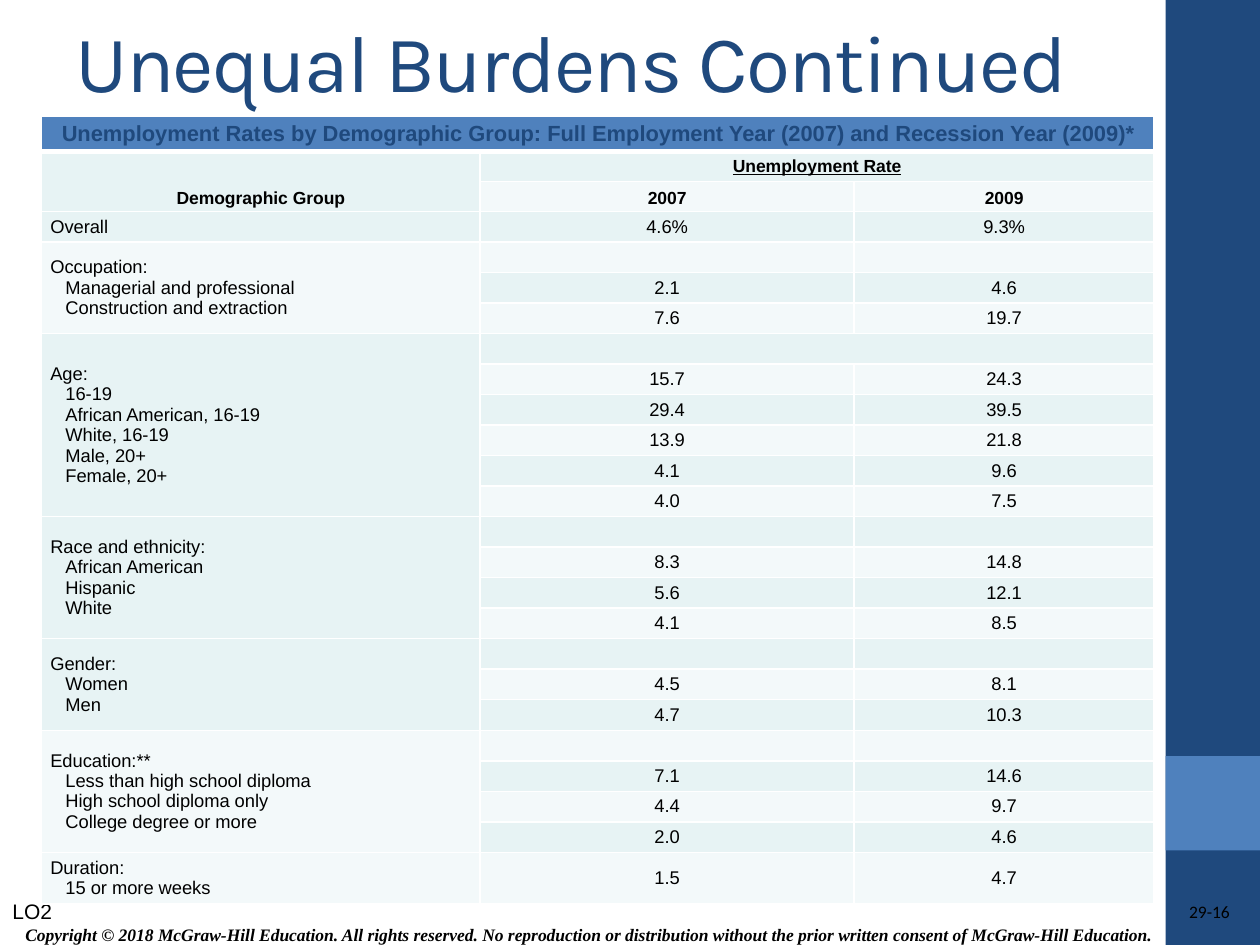
from lxml import etree
from pptx import Presentation
from pptx.dml.color import RGBColor
from pptx.enum.shapes import MSO_SHAPE
from pptx.enum.text import MSO_ANCHOR, PP_ALIGN
from pptx.oxml.ns import qn
from pptx.util import Inches, Pt

RECTANGLE = MSO_SHAPE.RECTANGLE
LEFT, CENTER, RIGHT = PP_ALIGN.LEFT, PP_ALIGN.CENTER, PP_ALIGN.RIGHT
TOP, MIDDLE, BOTTOM = MSO_ANCHOR.TOP, MSO_ANCHOR.MIDDLE, MSO_ANCHOR.BOTTOM

NAVY, BLUE, BLACK, WHITE = "1F497D", "4F81BD", "000000", "FFFFFF"
BANDS = ("F3F9FA", "E7F3F4")
GRID_COLUMNS, GRID_ROWS = 40, 30

GROUPS = [
    ("Overall", [], [("4.6%", "9.3%")]),
    ("Occupation:", ["Managerial and professional", "Construction and extraction"],
     [("", ""), ("2.1", "4.6"), ("7.6", "19.7")]),
    ("Age:", ["16-19", "African American, 16-19", "White, 16-19", "Male, 20+", "Female, 20+"],
     [("", ""), ("15.7", "24.3"), ("29.4", "39.5"), ("13.9", "21.8"),
      ("4.1", "9.6"), ("4.0", "7.5")]),
    ("Race and ethnicity:", ["African American", "Hispanic", "White"],
     [("", ""), ("8.3", "14.8"), ("5.6", "12.1"), ("4.1", "8.5")]),
    ("Gender:", ["Women", "Men"], [("", ""), ("4.5", "8.1"), ("4.7", "10.3")]),
    ("Education:**",
     ["Less than high school diploma", "High school diploma only", "College degree or more"],
     [("", ""), ("7.1", "14.6"), ("4.4", "9.7"), ("2.0", "4.6")]),
    ("Duration:", ["15 or more weeks"], [("1.5", "4.7")]),
]
HEADER_ROWS = 3
DATA_ROWS = sum(len(rates) for _, _, rates in GROUPS)
COLUMN_WIDTHS = [13.92, 11.88, 9.52]
ROW_HEIGHTS = [1.12, 0.96, 0.96] + [0.97] * (DATA_ROWS - 1) + [1.64]


def color(hex_string):
    return RGBColor.from_string(hex_string)


class SlideBuilder:
    def __init__(self, presentation):
        self.slide = presentation.slides.add_slide(presentation.slide_layouts[6])
        self.column = presentation.slide_width / GRID_COLUMNS
        self.row = presentation.slide_height / GRID_ROWS

    def across(self, columns):
        return round(columns * self.column)

    def down(self, rows):
        return round(rows * self.row)

    def place(self, left, top, width, height):
        return self.across(left), self.down(top), self.across(width), self.down(height)

    def rectangle(self, area, fill):
        shape = self.slide.shapes.add_shape(RECTANGLE, *self.place(*area))
        shape.shadow.inherit = False
        shape.fill.solid()
        shape.fill.fore_color.rgb = color(fill)
        shape.line.fill.background()

    def style(self, paragraph, size, font="Arial", ink=BLACK, align=LEFT,
              bold=False, italic=False, underline=False, spacing=0):
        paragraph.alignment = align
        for run in paragraph.runs:
            run.font.size = Pt(size)
            run.font.name = font
            run.font.color.rgb = color(ink)
            run.font.bold = bold
            run.font.italic = italic
            run.font.underline = underline
            if spacing:
                run.font._element.set("spc", str(spacing * 100))

    def text(self, area, words, size, anchor=TOP, inset=(0.1, 0.05), **style):
        frame = self.slide.shapes.add_textbox(*self.place(*area)).text_frame
        frame.word_wrap = True
        frame.vertical_anchor = anchor
        frame.margin_left = frame.margin_right = Inches(inset[0])
        frame.margin_top = frame.margin_bottom = Inches(inset[1])
        frame.text = words
        self.style(frame.paragraphs[0], size, **style)

    def border(self, cell, side, width):
        line = etree.SubElement(cell._tc.get_or_add_tcPr(), qn(f"a:ln{side}"), w=str(Pt(width)))
        fill = etree.SubElement(line, qn("a:solidFill"))
        etree.SubElement(fill, qn("a:srgbClr"), val=WHITE)

    def table(self, area, widths, heights):
        frame = self.slide.shapes.add_table(len(heights), len(widths), *self.place(*area))
        table = frame.table
        table.first_row = table.horz_banding = False
        for column, width in zip(table.columns, widths):
            column.width = self.across(width)
        for index, (row, height) in enumerate(zip(table.rows, heights)):
            row.height = self.down(height)
            for cell in row.cells:
                self.border(cell, "L", 1)
                self.border(cell, "R", 1)
                self.border(cell, "T", 3 if index == 1 else 1)
                self.border(cell, "B", 3 if index == 0 else 1)
                cell.fill.solid()
                cell.fill.fore_color.rgb = color(BANDS[index % 2] if index else BLUE)
                cell.margin_left = cell.margin_right = Inches(0.07)
                cell.margin_top = cell.margin_bottom = Inches(0.03)
                etree.SubElement(cell.text_frame.paragraphs[0]._p, qn("a:endParaRPr"), sz="1000")
        return table

    def cell(self, cell, words, size=10.5, anchor=MIDDLE, **style):
        cell.vertical_anchor = anchor
        cell.text_frame.text = words
        for index, paragraph in enumerate(cell.text_frame.paragraphs):
            self.style(paragraph, size, **style)
            if index:
                paragraph._p.get_or_add_pPr().set("marL", str(Inches(0.12)))


def fill_header(builder, table):
    heading = {"align": CENTER, "bold": True}
    title, group, rate = table.cell(0, 0), table.cell(1, 0), table.cell(1, 1)
    title.merge(table.cell(0, 2))
    group.merge(table.cell(2, 0))
    rate.merge(table.cell(1, 2))
    builder.cell(title, "Unemployment Rates by Demographic Group: Full Employment Year (2007) "
                 "and Recession Year (2009)*", 12.5, ink=NAVY, **heading)
    builder.cell(group, "Demographic Group", 10, BOTTOM, **heading)
    builder.cell(rate, "Unemployment Rate", 10, underline=True, **heading)
    for column, year in enumerate(("2007", "2009"), 1):
        builder.cell(table.cell(2, column), year, 10, BOTTOM, **heading)


def fill_groups(builder, table):
    first = HEADER_ROWS
    for name, members, rates in GROUPS:
        label = table.cell(first, 0)
        if len(rates) > 1:
            label.merge(table.cell(first + len(rates) - 1, 0))
        builder.cell(label, "\n".join([name, *members]))
        if name == "Age:":
            table.cell(first, 1).merge(table.cell(first, 2))
        for row, pair in enumerate(rates, first):
            for column, rate in enumerate(pair, 1):
                if rate:
                    builder.cell(table.cell(row, column), rate, align=CENTER)
        first += len(rates)


def main():
    presentation = Presentation()
    presentation.slide_width = Inches(10)
    presentation.slide_height = Inches(7.5)
    builder = SlideBuilder(presentation)
    builder.rectangle((37, 0, 3, 30), NAVY)
    builder.rectangle((37, 24, 3, 3), BLUE)
    builder.text((0.24, 29.12, 36.88, 1.12),
                 "Copyright © 2018 McGraw-Hill Education. All rights reserved. No reproduction or "
                 "distribution without the prior written consent of McGraw-Hill Education.",
                 10, MIDDLE, (0, 0.05), font="Times New Roman", align=CENTER,
                 bold=True, italic=True)
    builder.text((31.24, 28.6, 7.8, 0.8), "29-16", 10, inset=(0, 0), font="Calibri", align=RIGHT)
    builder.text((2, 0, 33.32, 3.8), "Unequal Burdens Continued", 46, MIDDLE,
                 font="Karla", ink=NAVY, spacing=-1)
    builder.text((0, 28.32, 3, 1.2), "LO2", 12)
    area = (1.32, 3.68, sum(COLUMN_WIDTHS), sum(ROW_HEIGHTS))
    table = builder.table(area, COLUMN_WIDTHS, ROW_HEIGHTS)
    fill_header(builder, table)
    fill_groups(builder, table)
    presentation.save("out.pptx")


if __name__ == "__main__":
    main()
